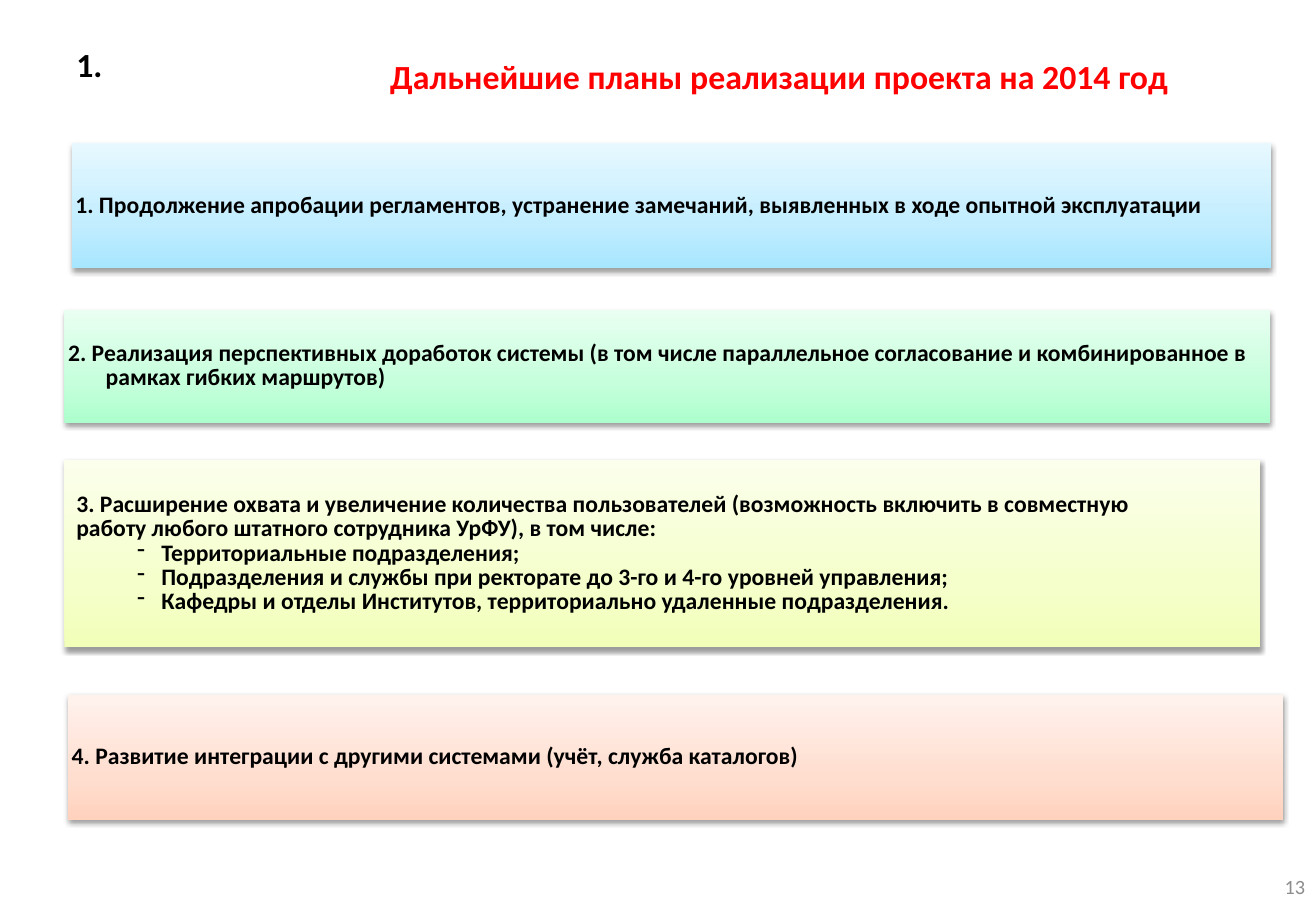
from copy import deepcopy
from dataclasses import dataclass

from lxml.etree import SubElement
from pptx import Presentation
from pptx.dml.color import RGBColor
from pptx.enum.shapes import MSO_SHAPE
from pptx.enum.text import MSO_ANCHOR, PP_ALIGN
from pptx.oxml.ns import qn
from pptx.shapes.autoshape import Shape
from pptx.slide import Slide
from pptx.util import Inches, Pt


@dataclass(frozen=True)
class Theme:
    font: str = "Calibri"
    title_size: int = 20
    body_size: int = 14
    number_size: int = 12
    black: str = "000000"
    title: str = "FF0000"
    number: str = "8C8C8C"
    blue: tuple[str, ...] = ("A7E6FF", "C1EDFF", "E7F8FF")
    green: tuple[str, ...] = ("ADFFCD", "C5FFDB", "E9FFF1")
    yellow: tuple[str, ...] = ("F1FFB8", "F5FFCC", "FBFFEC")
    orange: tuple[str, ...] = ("FFD2BD", "FFDED0", "FFF2ED")
    stops: tuple[float, ...] = (0, 0.35, 1)
    line_spacing: float = 0.85


THEME = Theme()


@dataclass(frozen=True)
class Area:
    left: float
    top: float
    width: float
    height: float

    def lengths(self) -> list[int]:
        return [Inches(value) for value in (self.left, self.top, self.width, self.height)]


@dataclass(frozen=True)
class Label:
    area: Area
    text: str
    size: int
    color: str
    bold: bool = True
    align: PP_ALIGN = PP_ALIGN.LEFT
    anchor: MSO_ANCHOR = MSO_ANCHOR.TOP
    spacing: float = 1.0


@dataclass(frozen=True)
class Plan:
    area: Area
    colors: tuple[str, ...]
    lines: tuple[str, ...]
    dashes: tuple[str, ...] = ()
    hanging: float = 0
    inset: float = 0.03


LABELS = [
    Label(Area(8.31, 7.1, 2.53, 0.4), "13", THEME.number_size, THEME.number,
          bold=False, align=PP_ALIGN.RIGHT, anchor=MSO_ANCHOR.MIDDLE),
    Label(Area(2, 0.29, 8.83, 0.55), "Дальнейшие планы реализации проекта на 2014 год",
          THEME.title_size, THEME.title, align=PP_ALIGN.CENTER, anchor=MSO_ANCHOR.BOTTOM),
    Label(Area(0.53, 0.36, 9.52, 0.39), "1.", THEME.title_size, THEME.black,
          spacing=THEME.line_spacing),
]

PLANS = [
    Plan(Area(0.59, 1.18, 9.87, 1.03), THEME.blue,
         ("1. Продолжение апробации регламентов, устранение замечаний, "
          "выявленных в ходе опытной эксплуатации",)),
    Plan(Area(0.53, 2.55, 9.92, 0.93), THEME.green,
         ("2. Реализация перспективных доработок системы (в том числе параллельное "
          "согласование и комбинированное в рамках гибких маршрутов)",), hanging=0.31),
    Plan(Area(0.53, 3.79, 9.84, 1.54), THEME.yellow,
         ("3. Расширение охвата и увеличение количества пользователей "
          "(возможность включить в совместную",
          "работу любого штатного сотрудника УрФУ), в том числе:"),
         dashes=("Территориальные подразделения;",
                 "Подразделения и службы при ректорате до 3-го и 4-го уровней управления;",
                 "Кафедры и отделы Институтов, территориально удаленные подразделения."),
         hanging=0.2, inset=0.1),
    Plan(Area(0.56, 5.72, 10, 1.03), THEME.orange,
         ("4. Развитие интеграции с другими системами (учёт, служба каталогов)",),
         hanging=0.2),
]


def write(paragraph, text: str, size: int, color: str, bold: bool,
          align: PP_ALIGN, spacing: float) -> None:
    paragraph.text = text
    paragraph.alignment = align
    paragraph.line_spacing = spacing
    font = paragraph.font
    font.name, font.size, font.bold = THEME.font, Pt(size), bold
    font.color.rgb = RGBColor.from_string(color)


def indent(paragraph, left: float, hanging: float) -> None:
    properties = paragraph._p.get_or_add_pPr()
    properties.set("marL", str(Inches(left)))
    properties.set("indent", str(-Inches(hanging)))


def add_label(page: Slide, label: Label) -> None:
    frame = page.shapes.add_textbox(*label.area.lengths()).text_frame
    frame.word_wrap = True
    frame.vertical_anchor = label.anchor
    write(frame.paragraphs[0], label.text, label.size, label.color, label.bold,
          label.align, label.spacing)


def fill_gradient(box: Shape, colors: tuple[str, ...]) -> None:
    """Shade the box upwards, from the first colour at its bottom edge."""
    box.fill.gradient()
    box.fill.gradient_angle = 90
    stop_list = box._element.spPr.find(".//" + qn("a:gsLst"))
    stop_list.append(deepcopy(stop_list[-1]))
    for stop, color, position in zip(box.fill.gradient_stops, colors, THEME.stops):
        stop.color.rgb = RGBColor.from_string(color)
        stop.position = position


def add_shadow(box: Shape) -> None:
    box.shadow.inherit = False
    effects = box._element.spPr.find(qn("a:effectLst"))
    shadow = SubElement(effects, qn("a:outerShdw"), blurRad=str(Pt(3.1)),
                        dist=str(Pt(1.6)), dir="5400000", rotWithShape="0")
    color = SubElement(shadow, qn("a:srgbClr"), val=THEME.black)
    SubElement(color, qn("a:alpha"), val="38000")


def add_plan(page: Slide, plan: Plan) -> None:
    box = page.shapes.add_shape(MSO_SHAPE.RECTANGLE, *plan.area.lengths())
    fill_gradient(box, plan.colors)
    box.line.fill.background()
    add_shadow(box)
    frame = box.text_frame
    frame.word_wrap = True
    frame.vertical_anchor = MSO_ANCHOR.MIDDLE
    frame.margin_left = frame.margin_right = Inches(plan.inset)
    frame.margin_top = frame.margin_bottom = Inches(0.03)
    for index, text in enumerate(plan.lines + plan.dashes):
        paragraph = frame.add_paragraph() if index else frame.paragraphs[0]
        if index < len(plan.lines):
            indent(paragraph, plan.hanging, plan.hanging)
        else:
            paragraph.level = 1
            indent(paragraph, 0.7, 0.2)
            SubElement(paragraph._p.get_or_add_pPr(), qn("a:buChar"), char="-")
        write(paragraph, text, THEME.body_size, THEME.black, True,
              PP_ALIGN.LEFT, THEME.line_spacing)


def main() -> None:
    deck = Presentation()
    deck.slide_width, deck.slide_height = Inches(10.83), Inches(7.5)
    page = deck.slides.add_slide(deck.slide_layouts[6])
    for label in LABELS:
        add_label(page, label)
    for plan in PLANS:
        add_plan(page, plan)
    deck.save("out.pptx")


if __name__ == "__main__":
    main()
